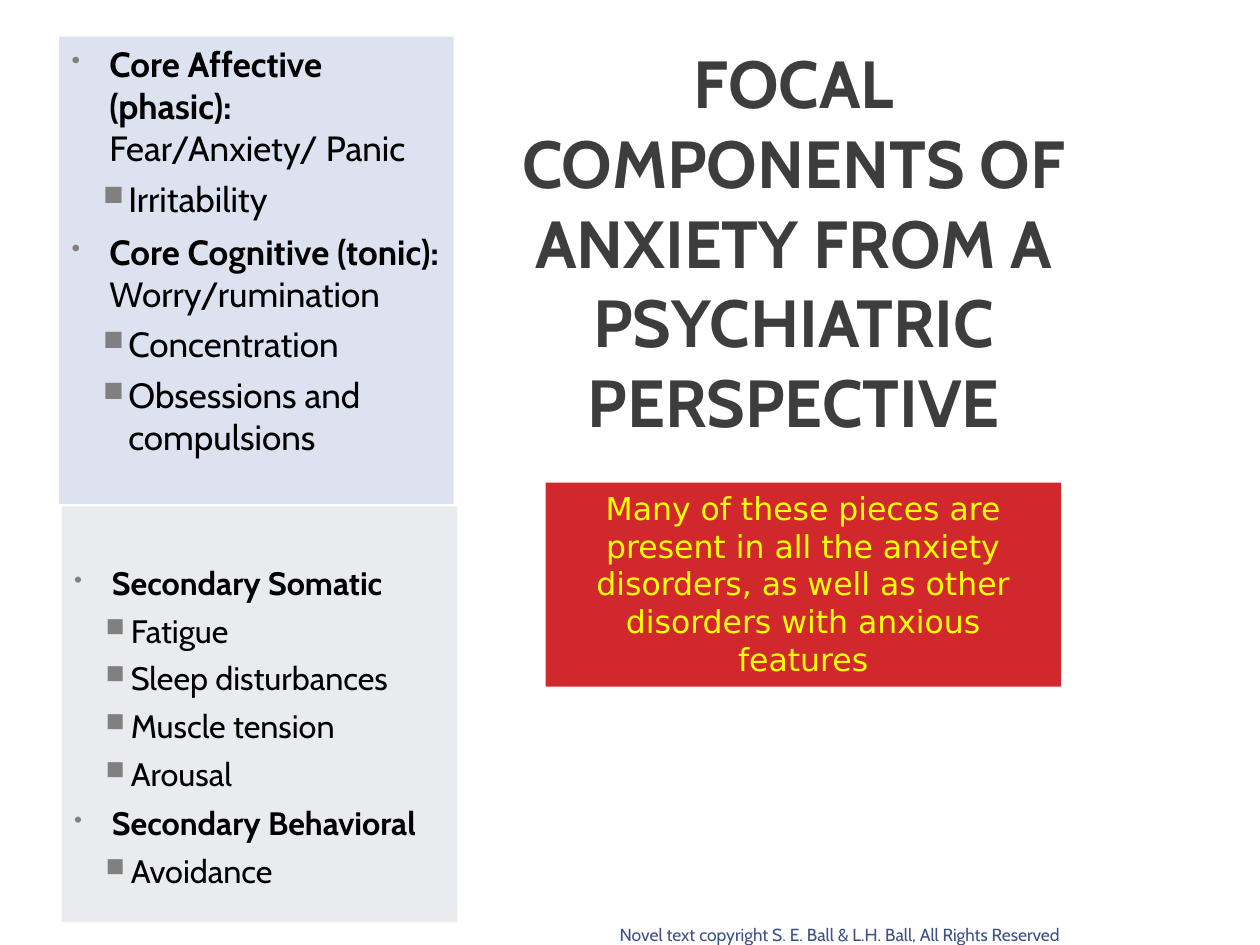
import pptx
import pptx.dml.color
import pptx.enum.shapes
import pptx.enum.text
import pptx.oxml.ns
import pptx.util
from lxml import etree

Inches, Pt = pptx.util.Inches, pptx.util.Pt
RGBColor = pptx.dml.color.RGBColor
ALIGN = pptx.enum.text.PP_ALIGN
ANCHOR = pptx.enum.text.MSO_ANCHOR

BLACK = RGBColor(0x00, 0x00, 0x00)
CHARCOAL = RGBColor(0x3D, 0x3D, 0x3D)
PALE_BLUE = RGBColor(0xDC, 0xE2, 0xEF)
PALE_GRAY = RGBColor(0xEA, 0xEB, 0xEE)
RED = RGBColor(0xD1, 0x28, 0x2E)
YELLOW = RGBColor(0xFF, 0xFF, 0x00)
NAVY = RGBColor(0x3D, 0x51, 0x85)
BULLET_GRAY = "808080"

TITLE = "FOCAL COMPONENTS OF ANXIETY FROM A PSYCHIATRIC PERSPECTIVE"
CALLOUT = ("Many of these pieces are present in all the anxiety disorders, "
           "as well as other disorders with anxious features")
COPYRIGHT = "Novel text copyright S. E. Ball & L.H. Ball, All Rights Reserved"

# Each group: bold heading, plain continuation, sub-items
CORE = [
    ("Core Affective (phasic): ", "Fear/Anxiety/ Panic", ["Irritability"]),
    ("Core Cognitive (tonic): ", "Worry/rumination",
     ["Concentration", "Obsessions and compulsions"]),
]
SECONDARY = [
    ("Secondary Somatic", "",
     ["Fatigue", "Sleep disturbances", "Muscle tension", "Arousal"]),
    ("Secondary Behavioral", "", ["Avoidance"]),
]
# Area, fill, text size, top inset, groups
PANELS = [
    ((0.47, 0.29, 3.13, 3.71), PALE_BLUE, 20, 0.05, CORE),
    ((0.49, 4.02, 3.14, 3.30), PALE_GRAY, 18.5, 0.45, SECONDARY),
]
# Character, size in percent, left margin, space before
LEVELS = [("•", 73, 0.30, 0.30, 6), ("■", 80, 0.45, 0.20, 5)]


def place(shape, area):
    shape.left, shape.top, shape.width, shape.height = map(Inches, area)


def set_frame(frame, anchor, side, top, bottom):
    frame.word_wrap = True
    frame.auto_size = pptx.enum.text.MSO_AUTO_SIZE.NONE
    frame.vertical_anchor = anchor
    frame.margin_left = frame.margin_right = Inches(side)
    frame.margin_top, frame.margin_bottom = Inches(top), Inches(bottom)


def add_span(para, text, size, color, bold=False, font="Cabin"):
    span = para.add_run()
    span.text = text
    span.font.name, span.font.size = font, Pt(size)
    span.font.bold = bold
    span.font.color.rgb = color


def add_rectangle(slide, area, fill):
    box = slide.shapes.add_shape(
        pptx.enum.shapes.MSO_SHAPE.RECTANGLE, *map(Inches, area))
    box.shadow.inherit = False
    box.fill.solid()
    box.fill.fore_color.rgb = fill
    box.line.fill.background()
    return box


def set_bullet(para, level):
    character, percent, margin, hang, _ = LEVELS[level]
    props = para._p.get_or_add_pPr()
    props.set("marL", str(Inches(margin)))
    props.set("indent", str(-Inches(hang)))
    qn = pptx.oxml.ns.qn
    color = etree.SubElement(props, qn("a:buClr"))
    etree.SubElement(color, qn("a:srgbClr"), val=BULLET_GRAY)
    etree.SubElement(props, qn("a:buSzPct"), val=str(percent * 1000))
    etree.SubElement(props, qn("a:buChar"), char=character)


def add_panel(slide, area, fill, size, top, groups):
    frame = add_rectangle(slide, area, fill).text_frame
    set_frame(frame, ANCHOR.TOP, 0.1, top, 0.05)
    rows = []
    for heading, detail, items in groups:
        rows.append((0, [(heading, True), (detail, False)]))
        rows += [(1, [(item, False)]) for item in items]
    for index, (level, spans) in enumerate(rows):
        para = frame.add_paragraph() if index else frame.paragraphs[0]
        para.level = level
        para.alignment = ALIGN.LEFT
        para.space_before = Pt(LEVELS[level][-1] if index else 0)
        set_bullet(para, level)
        for text, bold in spans:
            if text:
                add_span(para, text, size, BLACK, bold)


def main():
    deck = pptx.Presentation()
    deck.slide_width, deck.slide_height = Inches(10), Inches(7.5)
    slide = deck.slides.add_slide(deck.slide_layouts[5])

    title = slide.shapes.title
    place(title, (3.85, 0.33, 4.9, 3.17))
    set_frame(title.text_frame, ANCHOR.BOTTOM, 0.05, 0, 0)
    para = title.text_frame.paragraphs[0]
    para.alignment = ALIGN.CENTER
    add_span(para, TITLE, 38, CHARCOAL, bold=True)

    for panel in PANELS:
        add_panel(slide, *panel)

    callout = add_rectangle(slide, (4.33, 3.83, 4.09, 1.62), RED)
    set_frame(callout.text_frame, ANCHOR.TOP, 0.1, 0.05, 0.05)
    para = callout.text_frame.paragraphs[0]
    para.alignment = ALIGN.CENTER
    add_span(para, CALLOUT, 18, YELLOW, font="DejaVu Sans")

    footer = slide.shapes.add_textbox(*map(Inches, (4.82, 7.1, 4.58, 0.4)))
    set_frame(footer.text_frame, ANCHOR.BOTTOM, 0.1, 0, 0)
    add_span(footer.text_frame.paragraphs[0], COPYRIGHT, 10, NAVY)

    deck.save("out.pptx")


if __name__ == "__main__":
    main()
